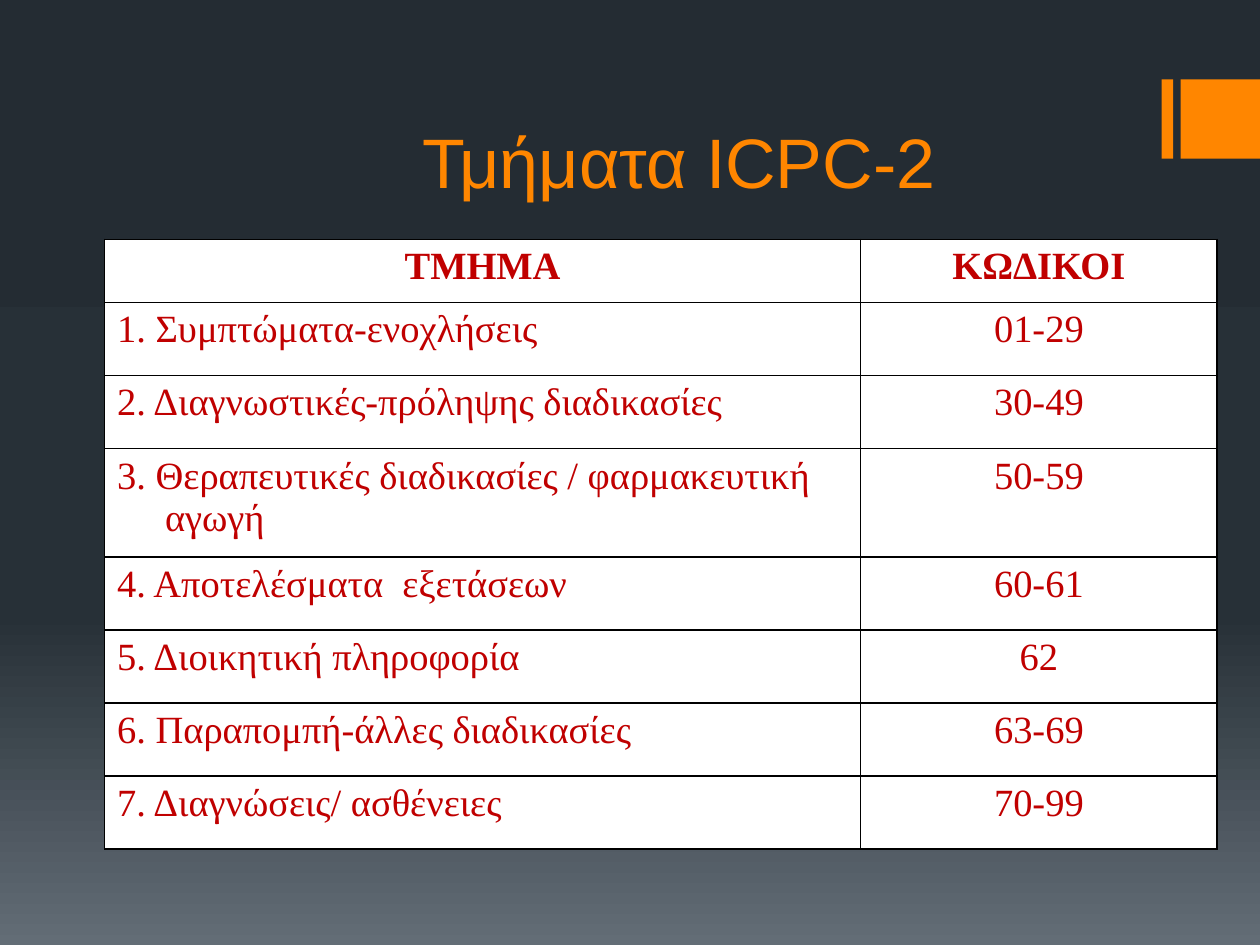
from copy import deepcopy

from lxml.etree import SubElement
from pptx import Presentation
from pptx.dml.color import RGBColor
from pptx.enum.shapes import MSO_SHAPE
from pptx.enum.text import MSO_ANCHOR, MSO_AUTO_SIZE, PP_ALIGN
from pptx.oxml.ns import qn
from pptx.util import Inches, Pt

COLORS = {
    "top": "242C33", "mid": "273037", "base": "636D76",
    "accent": "FF8600", "text": "C00000", "cell": "FFFFFF", "line": "000000",
}
ROWS = [
    ("ΤΜΗΜΑ", "ΚΩΔΙΚΟΙ"),
    ("1. Συμπτώματα-ενοχλήσεις", "01-29"),
    ("2. Διαγνωστικές-πρόληψης διαδικασίες", "30-49"),
    ("3. Θεραπευτικές διαδικασίες / φαρμακευτική αγωγή", "50-59"),
    ("4. Αποτελέσματα  εξετάσεων", "60-61"),
    ("5. Διοικητική πληροφορία", "62"),
    ("6. Παραπομπή-άλλες διαδικασίες", "63-69"),
    ("7. Διαγνώσεις/ ασθένειες", "70-99"),
]
WIDTHS = [6, 2.83]
HEIGHTS = [0.5, 0.58, 0.58, 0.86] + [0.58] * 4


def color(name):
    return RGBColor.from_string(COLORS[name])


def write(frame, text, font, size, tint, bold=False, align=PP_ALIGN.LEFT, hang=0):
    para = frame.paragraphs[0]
    para.alignment = align
    if hang:
        props = para._p.get_or_add_pPr()
        props.set("marL", str(Inches(hang)))
        props.set("indent", str(-Inches(hang)))
    run = para.add_run()
    run.text = text
    run.font.name = font
    run.font.size = Pt(size)
    run.font.bold = bold
    run.font.color.rgb = color(tint)


def paint_back(slide):
    fill = slide.background.fill
    fill.gradient()
    fill.gradient_angle = 270
    # The default gradient has two stops; a third goes between them
    stops = next(slide._element.iter(qn("a:gsLst")))
    stops.insert(1, deepcopy(stops[0]))
    marks = [(0, "top"), (0.65, "mid"), (1, "base")]
    for stop, (pos, name) in zip(fill.gradient_stops, marks):
        stop.position = pos
        stop.color.rgb = color(name)


def add_tab(slide, left, top, width, height):
    # Thin bar, a gap, then a square that meets the slide edge
    for x, wide in [(left, 0.09), (left + width - height, height)]:
        bar = slide.shapes.add_shape(
            MSO_SHAPE.RECTANGLE, Inches(x), Inches(top), Inches(wide), Inches(height))
        bar.shadow.inherit = False
        bar.fill.solid()
        bar.fill.fore_color.rgb = color("accent")
        bar.line.fill.background()


def set_title(slide, left, top, width, height):
    title = slide.shapes.title
    title.left, title.top = Inches(left), Inches(top)
    title.width, title.height = Inches(width), Inches(height)
    frame = title.text_frame
    frame.auto_size = MSO_AUTO_SIZE.NONE
    frame.vertical_anchor = MSO_ANCHOR.BOTTOM
    write(frame, "Τμήματα ICPC-2", font="Arial", size=40, tint="accent")


def add_border(cell):
    props = cell._tc.get_or_add_tcPr()
    for side in ("lnL", "lnR", "lnT", "lnB"):
        line = SubElement(props, qn(f"a:{side}"), w=str(Pt(1)))
        fill = SubElement(line, qn("a:solidFill"))
        SubElement(fill, qn("a:srgbClr"), val=COLORS["line"])


def add_grid(slide, left, top, width, height):
    table = slide.shapes.add_table(
        len(ROWS), len(WIDTHS), Inches(left), Inches(top),
        Inches(width), Inches(height)).table
    for col, wide in zip(table.columns, WIDTHS):
        col.width = Inches(wide)
    for row, tall in zip(table.rows, HEIGHTS):
        row.height = Inches(tall)
    for r, texts in enumerate(ROWS):
        for c, text in enumerate(texts):
            cell = table.cell(r, c)
            # Borders come before the fill in the cell's XML
            add_border(cell)
            cell.fill.solid()
            cell.fill.fore_color.rgb = color("cell")
            head = r == 0
            write(cell.text_frame, text, font="Times New Roman", size=22,
                  tint="text", bold=head, hang=0.38,
                  align=PP_ALIGN.CENTER if head or c else PP_ALIGN.LEFT)


def main():
    deck = Presentation()
    deck.slide_width, deck.slide_height = Inches(10), Inches(7.5)
    slide = deck.slides.add_slide(deck.slide_layouts[5])
    paint_back(slide)
    add_tab(slide, 9.22, 0.63, 0.78, 0.63)
    set_title(slide, 3.25, 0.3, 6.25, 1.36)
    add_grid(slide, 0.83, 1.9, sum(WIDTHS), sum(HEIGHTS))
    deck.save("out.pptx")


if __name__ == "__main__":
    main()
